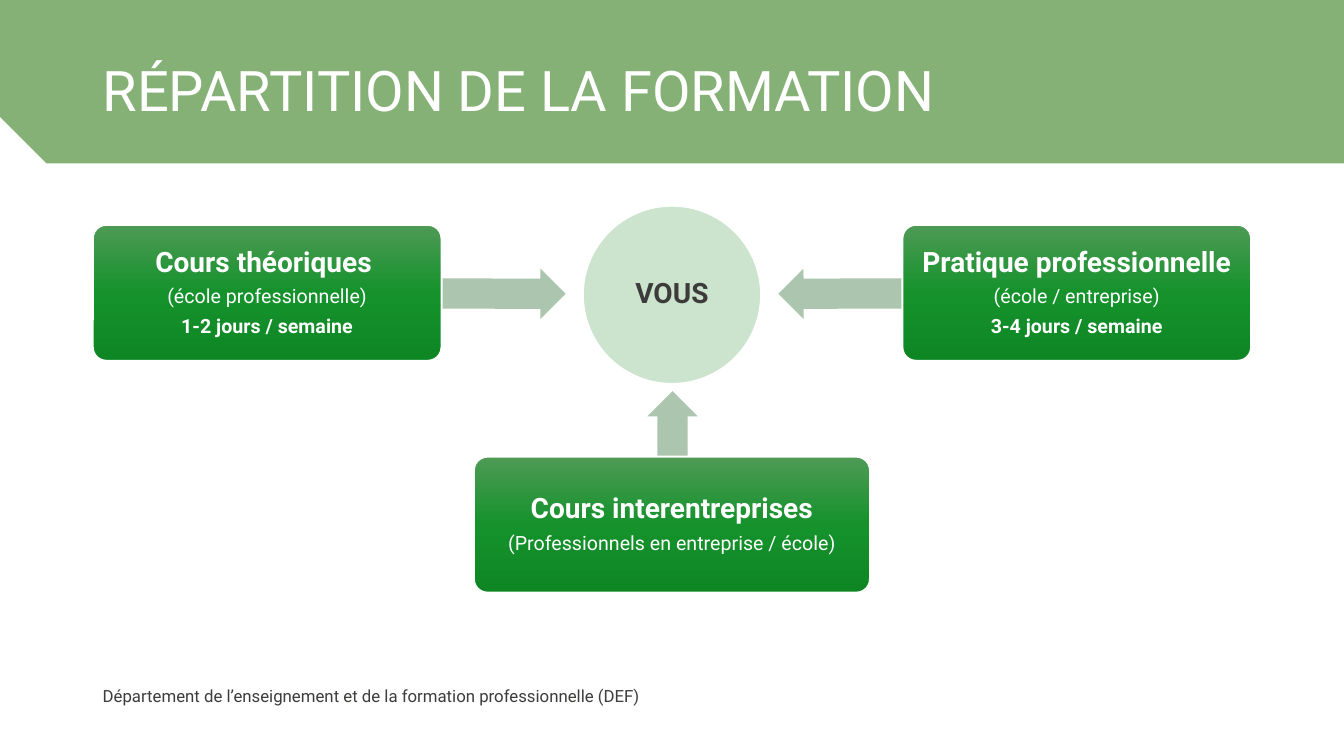
from copy import deepcopy
from dataclasses import dataclass

from pptx import Presentation
from pptx.dml.color import RGBColor
from pptx.enum.shapes import MSO_SHAPE
from pptx.enum.text import MSO_ANCHOR, PP_ALIGN
from pptx.oxml.ns import qn
from pptx.util import Inches, Pt

SNIP, OVAL = MSO_SHAPE.SNIP_1_RECTANGLE, MSO_SHAPE.OVAL
ARROW, ROUNDED = MSO_SHAPE.LEFT_ARROW, MSO_SHAPE.ROUNDED_RECTANGLE
MIDDLE = MSO_ANCHOR.MIDDLE
LEFT, CENTER = PP_ALIGN.LEFT, PP_ALIGN.CENTER

FONT = "Roboto"
WHITE, DARK = "FFFFFF", "3C3C3B"
BANNER_GREEN, ARROW_GREEN, CIRCLE_GREEN = "86B176", "ACC5AE", "CCE3CD"
CARD_GRADIENT = [(0, "4E9A55"), (0.5, "15922C"), (1, "0E8624")]
CARD_HEIGHT, ARROW_HEIGHT = 1.35, 0.5


@dataclass
class Line:
    text: str
    size: int
    bold: bool = False
    color: str = WHITE


@dataclass
class Course:
    left: float
    top: float
    width: float
    lines: list[Line]
    arrow_left: float
    arrow_top: float
    arrow_width: float
    arrow_rotation: float


COURSES = [
    Course(0.92, 2.23, 3.46,
           [Line("Cours théoriques ", 20, True),
            Line("(école professionnelle)", 14),
            Line("1-2 jours / semaine", 14, True)],
           2.65, 2.66, 2.96, 180.2),
    Course(8.95, 2.23, 3.46,
           [Line("Pratique professionnelle", 20, True),
            Line("(école / entreprise)", 14),
            Line("3-4 jours / semaine", 14, True)],
           7.72, 2.66, 2.96, 359.8),
    Course(4.7, 4.53, 3.93,
           [Line("Cours interentreprises", 20, True),
            Line("(Professionnels en entreprise / école)", 14)],
           6.01, 4.29, 1.32, 90),
]


def rgb(color: str) -> RGBColor:
    return RGBColor.from_string(color)


def add_shape(page, kind, left: float, top: float, width: float, height: float,
              fill: str | None = None, outlined: bool = False):
    shape = page.shapes.add_shape(kind, Inches(left), Inches(top),
                                  Inches(width), Inches(height))
    shape.shadow.inherit = False
    if fill:
        shape.fill.solid()
        shape.fill.fore_color.rgb = rgb(fill)
    if outlined:
        shape.line.color.rgb = rgb(WHITE)
        shape.line.width = Pt(1.5)
    else:
        shape.line.fill.background()
    return shape


def set_gradient(shape, stops: list[tuple[float, str]]) -> None:
    shape.fill.gradient()
    shape.fill.gradient_angle = 270
    stop_list = shape.fill._xPr.find(qn("a:gradFill")).find(qn("a:gsLst"))
    while len(stop_list) < len(stops):
        stop_list.append(deepcopy(stop_list[0]))
    for stop, (position, color) in zip(shape.fill.gradient_stops, stops):
        stop.position = position
        stop.color.rgb = rgb(color)


def write(shape, lines: list[Line], align=CENTER, inset: float | None = None,
          spacing: float = 0.9, after: float = 0) -> None:
    frame = shape.text_frame
    frame.word_wrap = True
    frame.vertical_anchor = MIDDLE
    if inset is not None:
        frame.margin_left = frame.margin_right = Inches(inset)
        frame.margin_top = frame.margin_bottom = Inches(inset)
    for index, line in enumerate(lines):
        para = frame.add_paragraph() if index else frame.paragraphs[0]
        para.text = line.text
        para.alignment = align
        para.line_spacing = spacing
        para.space_after = Pt(after)
        para.font.name = FONT
        para.font.size = Pt(line.size)
        para.font.bold = line.bold
        para.font.color.rgb = rgb(line.color)


def add_label(page, left: float, top: float, width: float, height: float,
              line: Line, spacing: float) -> None:
    box = page.shapes.add_textbox(Inches(left), Inches(top),
                                  Inches(width), Inches(height))
    write(box, [line], LEFT, spacing=spacing)


def add_course(page, course: Course) -> None:
    arrow = add_shape(page, ARROW, course.arrow_left, course.arrow_top,
                      course.arrow_width, ARROW_HEIGHT, ARROW_GREEN)
    arrow.adjustments[0] = 0.6
    arrow.adjustments[1] = 0.5
    arrow.rotation = course.arrow_rotation
    card = add_shape(page, ROUNDED, course.left, course.top,
                     course.width, CARD_HEIGHT, outlined=True)
    card.adjustments[0] = 0.1
    set_gradient(card, CARD_GRADIENT)
    write(card, course.lines, inset=0.04, after=6)


def main() -> None:
    deck = Presentation()
    deck.slide_width, deck.slide_height = Inches(13.33), Inches(7.5)
    page = deck.slides.add_slide(deck.slide_layouts[6])

    # Footer, banner and title
    add_label(page, 0.92, 6.7, 6.19, 0.4,
              Line("Département de l’enseignement et de la formation "
                   "professionnelle (DEF)", 12, color=DARK), 1.0)
    banner = add_shape(page, SNIP, 0, 0, 13.33, 1.62, BANNER_GREEN)
    banner.adjustments[0] = 0.284
    banner.rotation = 180
    add_label(page, 0.92, 0.25, 11.5, 1.35,
              Line("RÉPARTITION DE LA FORMATION", 40), 0.9)

    # Central circle
    circle = add_shape(page, OVAL, 5.78, 2.04, 1.77, 1.77, CIRCLE_GREEN, True)
    write(circle, [Line("VOUS", 20, True, DARK)], inset=0.01, after=7)

    # Courses pointing at the circle
    for course in COURSES:
        add_course(page, course)

    deck.save("out.pptx")


if __name__ == "__main__":
    main()
